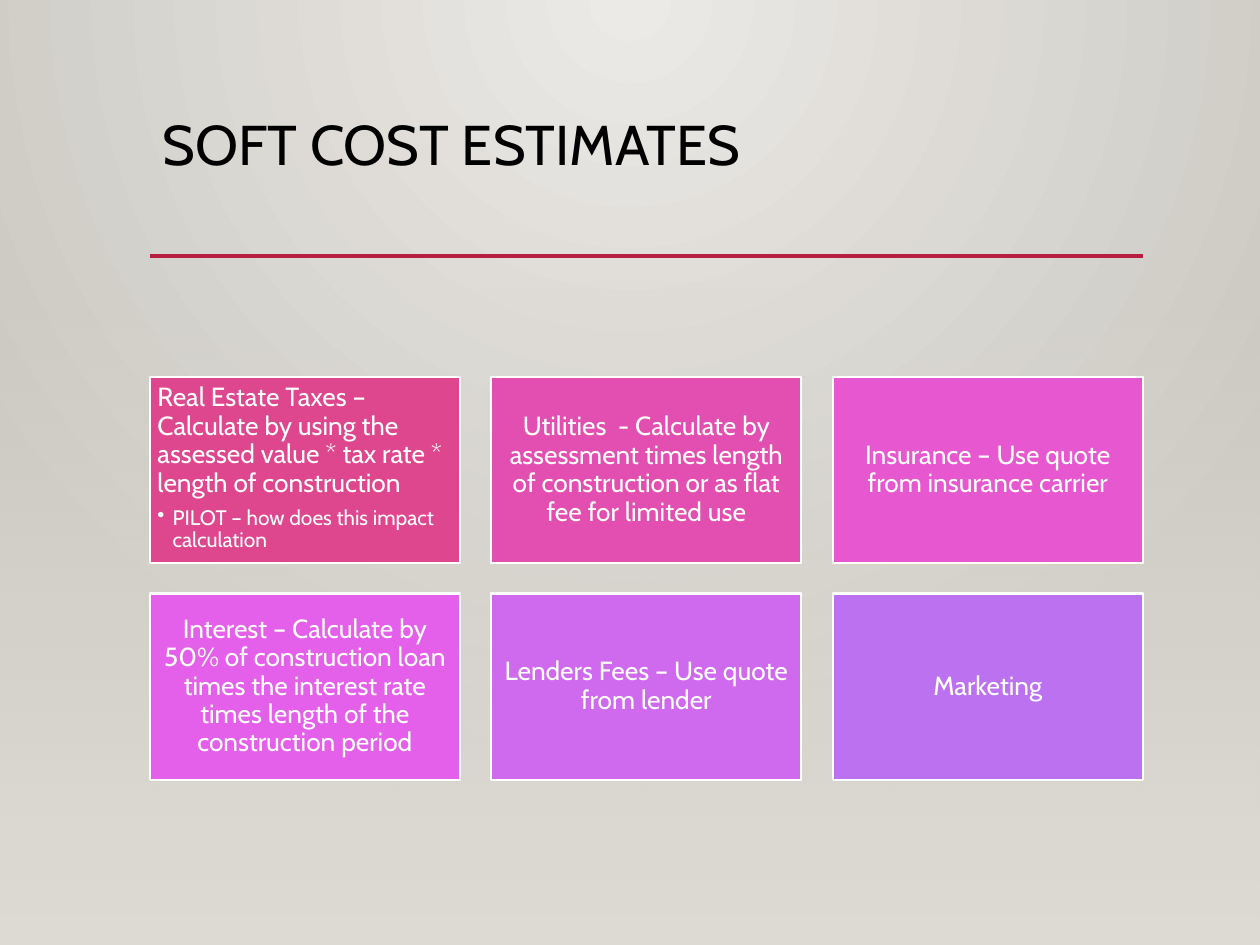
from lxml.etree import SubElement
from pptx import Presentation
from pptx.dml.color import RGBColor
from pptx.enum.shapes import MSO_CONNECTOR, MSO_SHAPE
from pptx.enum.text import MSO_ANCHOR, PP_ALIGN
from pptx.oxml.ns import qn
from pptx.util import Inches, Pt


def color(hex_value):
    return RGBColor.from_string(hex_value)


def write(paragraph, text, size, fill="FFFFFF", align=PP_ALIGN.LEFT, after=0, bullet=False):
    if bullet:
        properties = paragraph._p.get_or_add_pPr()
        properties.set("marL", str(Inches(0.12)))
        properties.set("indent", str(-Inches(0.12)))
        SubElement(properties, qn("a:buChar"), char="•")
    paragraph.alignment = align
    paragraph.line_spacing = 0.9
    paragraph.space_after = Pt(after)
    run = paragraph.add_run()
    run.text = text
    run.font.name = "Cabin"
    run.font.size = Pt(size)
    run.font.color.rgb = color(fill)


presentation = Presentation()
presentation.slide_width = Inches(10)
presentation.slide_height = Inches(7.5)
slide = presentation.slides.add_slide(presentation.slide_layouts[6])
shapes = slide.shapes

# Backdrop: radial glow from the top centre, with a floor fading in over it
glow = shapes.add_shape(MSO_SHAPE.RECTANGLE, 0, 0, Inches(10), Inches(7.5))
floor = shapes.add_shape(MSO_SHAPE.RECTANGLE, 0, Inches(2.21), Inches(10), Inches(5.29))
for panel in (glow, floor):
    panel.shadow.inherit = False
    panel.line.fill.background()

for fill, stops in (
    (slide.background.fill, ("ECEAE7", "CAC7C1")),
    (glow.fill, ("ECEAE7", "CAC7C1")),
    (floor.fill, ("DFDBD5", "DFDBD5")),
):
    fill.gradient()
    for stop, stop_color in zip(fill.gradient_stops, stops):
        stop.color.rgb = color(stop_color)

floor.fill.gradient_angle = 270
clear_stop = floor._element.find(".//" + qn("a:srgbClr"))
SubElement(clear_stop, qn("a:alpha"), val="0")

for holder in (slide.background._cSld, glow._element.spPr):
    gradient = next(holder.iter(qn("a:gradFill")))
    gradient.remove(gradient.find(qn("a:lin")))
    circle = SubElement(gradient, qn("a:path"))
    circle.set("path", "circle")
    SubElement(circle, qn("a:fillToRect"), l="43000", t="0", r="43000", b="100000")

# Title and rule
title = shapes.add_textbox(Inches(1.19), Inches(0.88), Inches(7.88), Inches(1.15)).text_frame
title.word_wrap = True
write(title.paragraphs[0], "SOFT COST ESTIMATES", size=32, fill="000000")

rule = shapes.add_connector(
    MSO_CONNECTOR.STRAIGHT, Inches(1.19), Inches(2.03), Inches(9.07), Inches(2.03))
rule.line.color.rgb = color("B71E42")
rule.line.width = Pt(2.5)
SubElement(rule._element.spPr, qn("a:effectLst"))

# Cost cards: three columns, two rows
costs = [
    ("DE478E", "Real Estate Taxes – Calculate by using the assessed value * tax rate * "
               "length of construction", "PILOT – how does this impact calculation"),
    ("E24FB0", "Utilities  - Calculate by assessment times length of construction "
               "or as flat fee for limited use", None),
    ("E657D0", "Insurance – Use quote from insurance carrier", None),
    ("E560EA", "Interest – Calculate by 50% of construction loan times the interest rate "
               "times length of the construction period", None),
    ("CF69ED", "Lenders Fees – Use quote from lender", None),
    ("BC72F0", "Marketing", None),
]
for index, (card_color, estimate, detail) in enumerate(costs):
    row, column = divmod(index, 3)
    card = shapes.add_shape(
        MSO_SHAPE.RECTANGLE, Inches(1.19 + 2.71 * column), Inches(2.99 + 1.72 * row),
        Inches(2.46), Inches(1.48))
    card.shadow.inherit = False
    card.fill.solid()
    card.fill.fore_color.rgb = color(card_color)
    card.line.color.rgb = color("FFFFFF")
    card.line.width = Pt(1.25)

    frame = card.text_frame
    frame.word_wrap = True
    frame.margin_left = frame.margin_right = Inches(0.06)
    frame.margin_top = frame.margin_bottom = Inches(0.06)
    frame.vertical_anchor = MSO_ANCHOR.TOP if detail else MSO_ANCHOR.MIDDLE
    write(frame.paragraphs[0], estimate, size=15, after=5.25,
          align=PP_ALIGN.LEFT if detail else PP_ALIGN.CENTER)
    if detail:
        write(frame.add_paragraph(), detail, size=12, after=1.8, bullet=True)

presentation.save("out.pptx")
